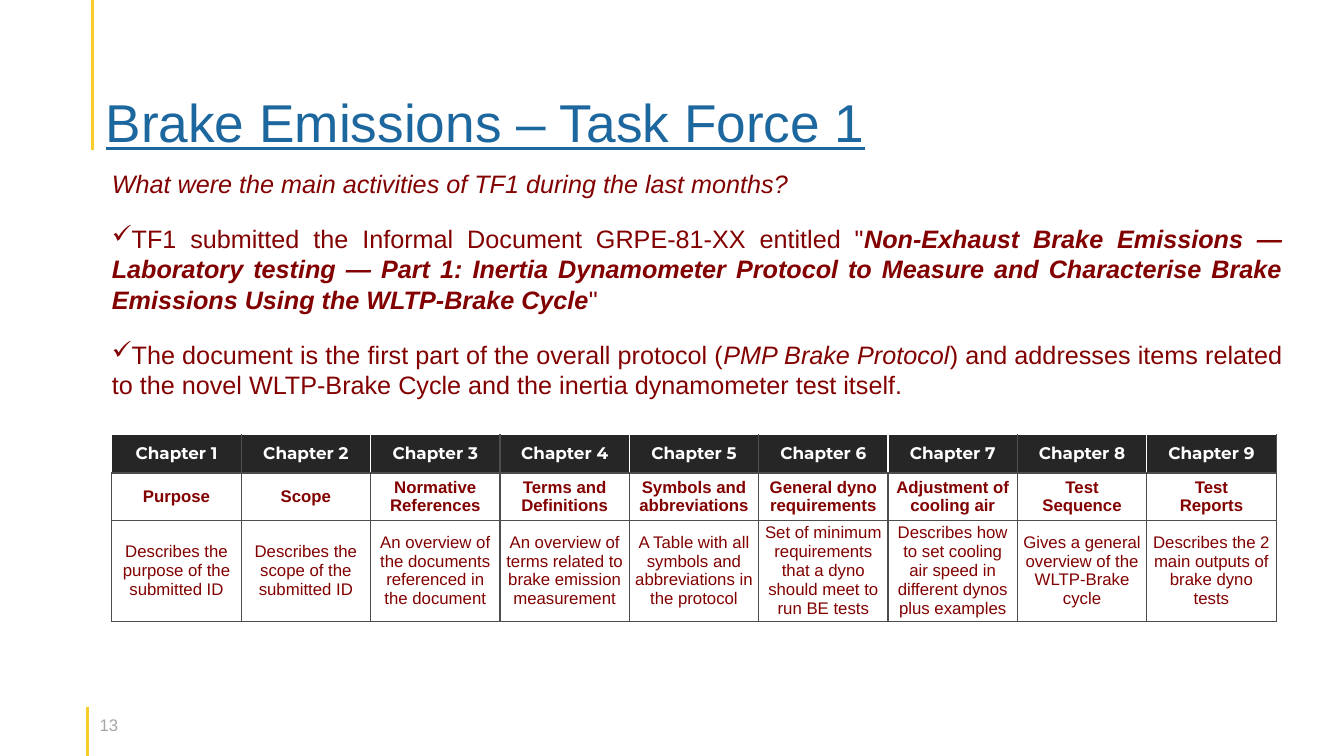
import pptx
import pptx.util
import pptx.dml.color
import pptx.enum.shapes
import pptx.enum.text
import pptx.oxml.ns
from lxml import etree

Cm = pptx.util.Cm
Pt = pptx.util.Pt
RGBColor = pptx.dml.color.RGBColor
Align = pptx.enum.text.PP_ALIGN
Anchor = pptx.enum.text.MSO_ANCHOR
qn = pptx.oxml.ns.qn

WHITE = RGBColor(0xFF, 0xFF, 0xFF)
BLACK = RGBColor(0x26, 0x26, 0x26)
GREY = RGBColor(0x4D, 0x4D, 0x4D)
PALE = RGBColor(0xA6, 0xA6, 0xA6)
RED = RGBColor(0x82, 0x00, 0x00)
BLUE = RGBColor(0x1D, 0x67, 0x9F)
GOLD = RGBColor(0xF8, 0xCC, 0x29)

# Each run is text, bold, italic; only the first paragraph has no bullet.
BODY = [
    [("What were the main activities of TF1 during the last months?", False, True)],
    [('TF1 submitted the Informal Document GRPE-81-XX entitled "', False, False),
     ("Non-Exhaust Brake Emissions — Laboratory testing — Part 1: Inertia "
      "Dynamometer Protocol to Measure and Characterise Brake Emissions Using "
      "the WLTP-Brake Cycle", True, True),
     ('"', False, False)],
    [("The document is the first part of the overall protocol (", False, False),
     ("PMP Brake Protocol", False, True),
     (") and addresses items related to the novel WLTP-Brake Cycle and the "
      "inertia dynamometer test itself.", False, False)],
]

CHAPTERS = [
    ("Purpose", "Describes the purpose of the submitted ID"),
    ("Scope", "Describes the scope of the submitted ID"),
    ("Normative References", "An overview of the documents referenced in the document"),
    ("Terms and Definitions", "An overview of terms related to brake emission measurement"),
    ("Symbols and abbreviations",
     "A Table with all symbols and abbreviations in the protocol"),
    ("General dyno requirements",
     "Set of minimum requirements that a dyno should meet to run BE tests"),
    ("Adjustment of cooling air",
     "Describes how to set cooling air speed in different dynos plus examples"),
    ("Test\nSequence", "Gives a general overview of the WLTP-Brake cycle"),
    ("Test\nReports", "Describes the 2 main outputs of brake dyno tests"),
]


def style(run, size, color, bold=False, italic=False, face="Arial"):
    font = run.font
    font.name, font.size = face, Pt(size)
    font.bold, font.italic = bold, italic
    font.color.rgb = color


def add_box(slide, left, top, width, height):
    box = slide.shapes.add_textbox(Cm(left), Cm(top), Cm(width), Cm(height))
    box.text_frame.word_wrap = True
    return box.text_frame


def add_rule(slide, x, top, end):
    rule = slide.shapes.add_connector(
        pptx.enum.shapes.MSO_CONNECTOR.STRAIGHT, Cm(x), Cm(top), Cm(x), Cm(end))
    rule.line.color.rgb = GOLD
    rule.line.width = Pt(2.25)
    etree.SubElement(rule._element.spPr, qn("a:effectLst"))


def add_title(slide, text):
    frame = add_box(slide, 2.41, 1.7, 30.76, 2.18)
    frame.vertical_anchor = Anchor.BOTTOM
    frame.margin_bottom = 0
    frame.text = text
    para = frame.paragraphs[0]
    para.line_spacing = 0.9
    style(para.runs[0], 38, BLUE)
    para.runs[0].font.underline = True


def add_number(slide, text):
    frame = add_box(slide, 2.51, 17.88, 1.24, 0.76)
    frame.margin_left = frame.margin_right = 0
    frame.text = text
    style(frame.paragraphs[0].runs[0], 12, PALE)


def add_check(para):
    props = para._p.get_or_add_pPr()
    props.set("marL", "0")
    props.set("indent", str(-Cm(0.97)))
    etree.SubElement(props, qn("a:buChar"), char="✓")


def add_body(slide):
    frame = add_box(slide, 2.57, 4.11, 30, 13.11)
    for i, parts in enumerate(BODY):
        para = frame.add_paragraph() if i else frame.paragraphs[0]
        if i:
            add_check(para)
        para.alignment = Align.JUSTIFY
        para.space_after = Pt(18)
        for text, bold, italic in parts:
            run = para.add_run()
            run.text = text
            style(run, 18, RED, bold, italic)


def set_edges(cell, colors):
    """Draw the left, right, top and bottom borders in the given colours."""
    props = cell._tc.get_or_add_tcPr()
    for i, (side, color) in enumerate(zip("LRTB", colors)):
        line = etree.Element(qn("a:ln" + side), w=str(Pt(1)))
        fill = etree.SubElement(line, qn("a:solidFill"))
        etree.SubElement(fill, qn("a:srgbClr"), val=str(color))
        props.insert(i, line)


def fill_cell(cell, text, back, color, bold, face):
    cell.fill.solid()
    cell.fill.fore_color.rgb = back
    cell.vertical_anchor = Anchor.MIDDLE
    cell.margin_left = cell.margin_right = Cm(0.13)
    cell.margin_top = cell.margin_bottom = 0
    cell.text_frame.text = text
    for para in cell.text_frame.paragraphs:
        para.alignment = Align.CENTER
        style(para.runs[0], 12, color, bold, face=face)


def add_grid(slide):
    heights = [0.97, 1.19, 2.49]
    wide = 3.26
    count = len(CHAPTERS)
    table = slide.shapes.add_table(
        len(heights), count, Cm(2.82), Cm(10.95),
        Cm(wide * count), Cm(sum(heights))).table
    table.horz_banding = False
    for row, height in zip(table.rows, heights):
        row.height = Cm(height)
    for i, (topic, detail) in enumerate(CHAPTERS):
        table.columns[i].width = Cm(wide)
        head, name, note = (table.cell(j, i) for j in range(len(heights)))
        fill_cell(head, f"Chapter {i + 1}", BLACK, WHITE, True, "Montserrat")
        fill_cell(name, topic, WHITE, RED, True, "Arial")
        fill_cell(note, detail, WHITE, RED, False, "Arial")
        sides = (GREY, WHITE) if i % 2 else (WHITE, GREY)
        set_edges(head, [*sides, WHITE, GREY])
        for cell in (name, note):
            set_edges(cell, [GREY] * 4)


def main():
    deck = pptx.Presentation()
    deck.slide_width, deck.slide_height = Cm(33.87), Cm(19.05)
    slide = deck.slides.add_slide(deck.slide_layouts[6])
    add_number(slide, "13")
    add_rule(slide, 2.21, 17.81, 19.05)
    add_rule(slide, 2.34, 0, 3.78)
    add_title(slide, "Brake Emissions – Task Force 1")
    add_body(slide)
    add_grid(slide)
    deck.save("out.pptx")


if __name__ == "__main__":
    main()
